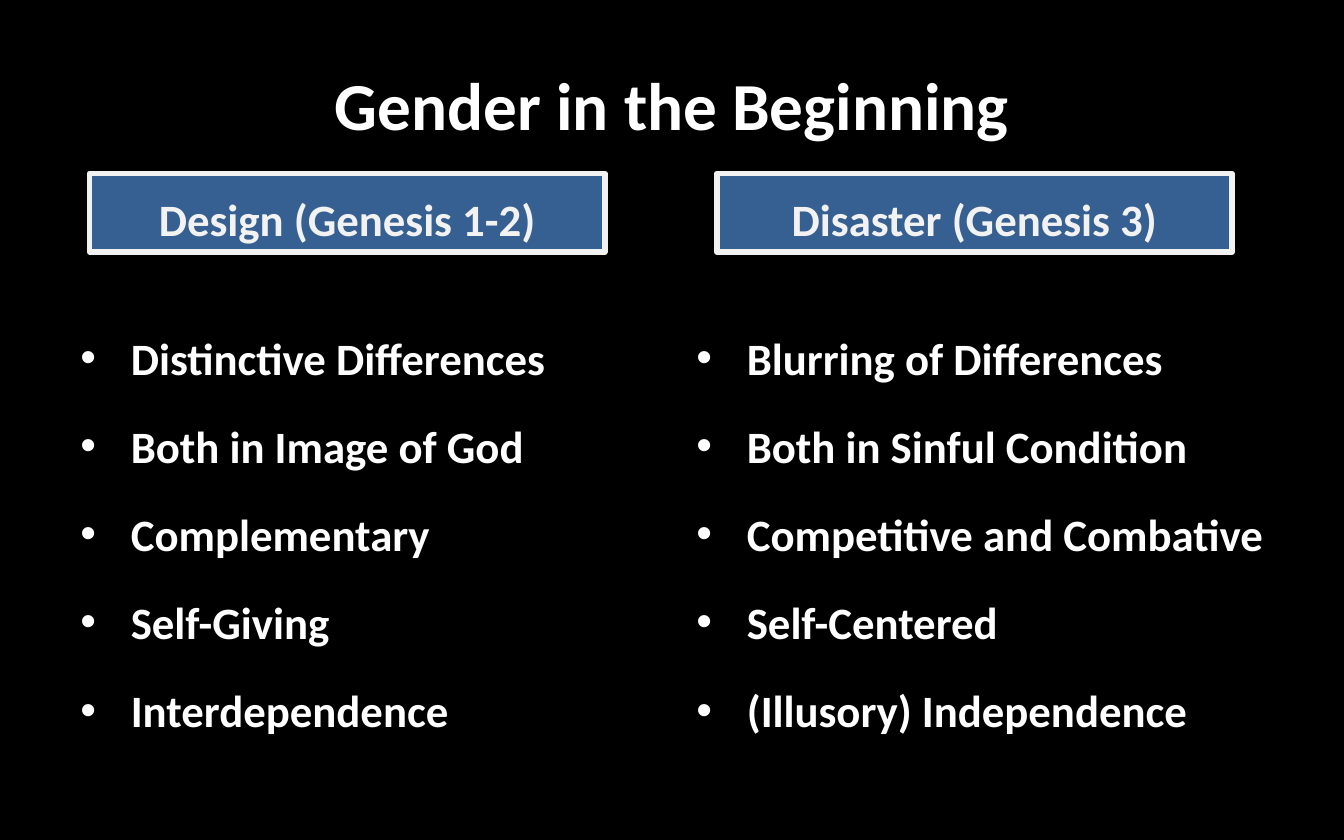
from dataclasses import dataclass

from lxml import etree
from pptx import Presentation
from pptx.dml.color import RGBColor
from pptx.enum import shapes, text
from pptx.oxml import ns
from pptx.util import Pt


@dataclass(frozen=True)
class Theme:
    font: str = "Calibri"
    background: RGBColor = RGBColor(0, 0, 0)
    ink: RGBColor = RGBColor(255, 255, 255)
    panel: RGBColor = RGBColor(0x37, 0x60, 0x92)
    edge: RGBColor = RGBColor(0xF2, 0xF2, 0xF2)
    title_size: int = 36
    body_size: int = 24


class Composer:
    def __init__(self, theme, page):
        self.theme = theme
        self.page = page
        page.background.fill.solid()
        page.background.fill.fore_color.rgb = theme.background

    def add_span(self, para, words, size, color):
        span = para.add_run()
        span.text = words
        span.font.name = self.theme.font
        span.font.size = Pt(size)
        span.font.bold = True
        span.font.color.rgb = color

    def title(self, words, left, top, width, height):
        box = self.page.shapes.title
        box.left, box.top, box.width, box.height = map(Pt, (left, top, width, height))
        frame = box.text_frame
        frame.vertical_anchor = text.MSO_ANCHOR.MIDDLE
        para = frame.paragraphs[0]
        para.alignment = text.PP_ALIGN.CENTER
        self.add_span(para, words, self.theme.title_size, self.theme.ink)

    def heading(self, words, left, top, width, height):
        box = self.page.shapes.add_shape(
            shapes.MSO_SHAPE.RECTANGLE, *map(Pt, (left, top, width, height))
        )
        box.shadow.inherit = False
        box.fill.solid()
        box.fill.fore_color.rgb = self.theme.panel
        box.line.color.rgb = self.theme.edge
        box.line.width = Pt(3)
        frame = box.text_frame
        frame.word_wrap = True
        frame.vertical_anchor = text.MSO_ANCHOR.BOTTOM
        para = frame.paragraphs[0]
        para.alignment = text.PP_ALIGN.CENTER
        self.add_span(para, words, self.theme.body_size, self.theme.edge)

    def bullets(self, items, left, top, width, height):
        box = self.page.shapes.add_textbox(*map(Pt, (left, top, width, height)))
        frame = box.text_frame
        frame.word_wrap = True
        for index, words in enumerate(items):
            para = frame.paragraphs[0] if index == 0 else frame.add_paragraph()
            para.line_spacing = 1.5
            if index:
                para.space_before = Pt(4)
            properties = para._p.get_or_add_pPr()
            properties.set("marL", str(Pt(27)))
            properties.set("indent", str(-Pt(27)))
            etree.SubElement(properties, ns.qn("a:buFont"), typeface="Arial")
            etree.SubElement(properties, ns.qn("a:buChar"), char="•")
            self.add_span(para, words, self.theme.body_size, self.theme.ink)


def main():
    deck = Presentation()
    deck.slide_width, deck.slide_height = Pt(720), Pt(450)
    page = deck.slides.add_slide(deck.slide_layouts[5])
    composer = Composer(Theme(), page)
    composer.title("Gender in the Beginning", 36, 18, 648, 75)

    columns = [
        ("Design (Genesis 1-2)", 48, 36, 318,
         ["Distinctive Differences", "Both in Image of God", "Complementary",
          "Self-Giving", "Interdependence"]),
        ("Disaster (Genesis 3)", 384, 366, 330,
         ["Blurring of Differences", "Both in Sinful Condition",
          "Competitive and Combative", "Self-Centered", "(Illusory) Independence"]),
    ]
    for heading, heading_left, list_left, list_width, items in columns:
        composer.heading(heading, heading_left, 93, 276, 42)
        composer.bullets(items, list_left, 159, list_width, 259)

    deck.save("out.pptx")


if __name__ == "__main__":
    main()
